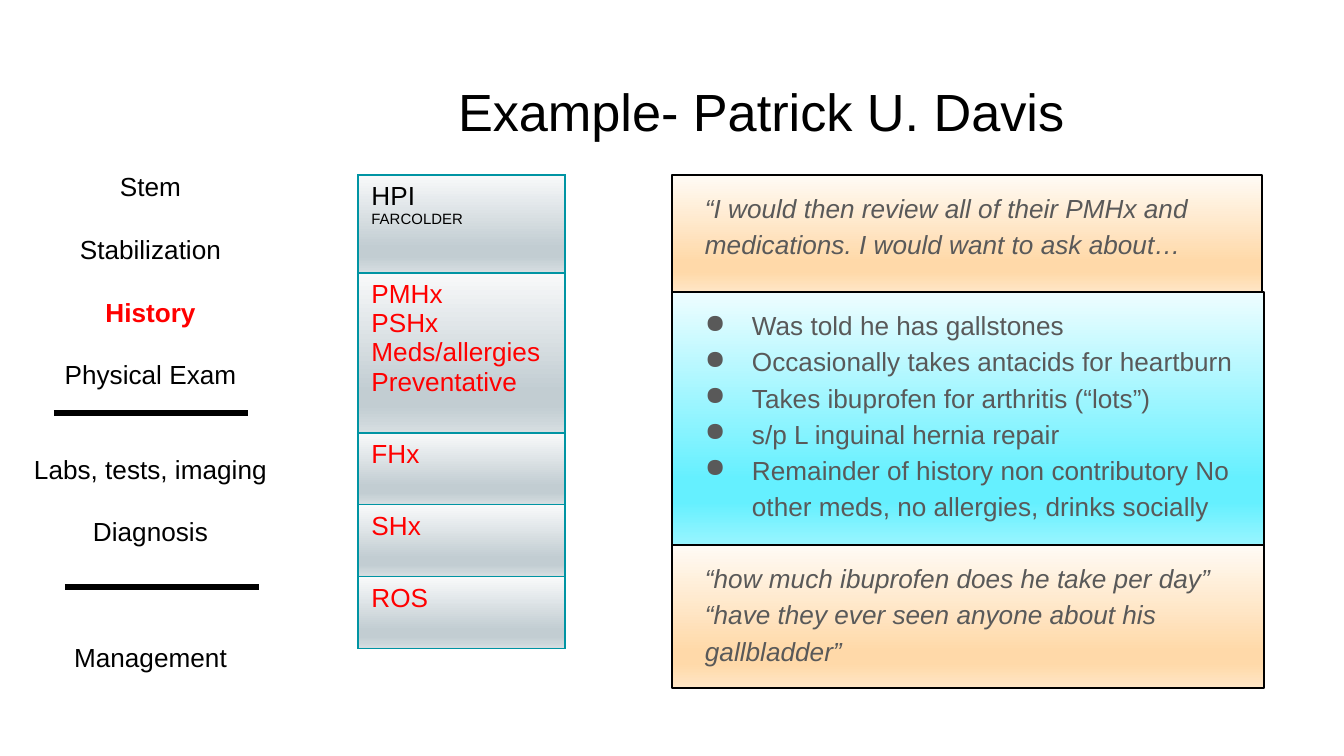
from dataclasses import dataclass

from lxml.etree import SubElement
from pptx import Presentation
from pptx.dml.color import RGBColor as Rgb
from pptx.enum.shapes import MSO_CONNECTOR as Connector, MSO_SHAPE as Shape
from pptx.enum.text import MSO_ANCHOR as Anchor, MSO_AUTO_SIZE as AutoSize, PP_ALIGN as Align
from pptx.oxml.ns import qn
from pptx.util import Emu, Pt

EMU_PER_PX = 914400 / 134.4


@dataclass(frozen=True)
class Theme:
    """Colours, gradients, type sizes and line pitches of the slide."""
    font: str = "Arial"
    ink: str = "000000"
    accent: str = "FF0000"
    muted: str = "595959"
    grid: str = "0094A3"
    grey: tuple = ("F8F9FA", "C2CDD2", "C2CDD2", "D6DEE1")
    orange: tuple = ("FFFBF5", "FFD9A9", "FFD9A9", "FFE6C6")
    cyan: tuple = ("EEFDFF", "65F0FF", "65F0FF", "98F5FF")
    stops: tuple = (0, 74, 83, 100)
    title: int = 28
    body: int = 14
    small: int = 8
    tight: float = 1.12
    normal: float = 1.2
    loose: float = 1.38
    thin: float = 0.75
    thick: float = 3.5


THEME = Theme()


def px(length):
    """Turn px into EMU."""
    return Emu(round(length * EMU_PER_PX))


def add_para(frame, index, text, color, pitch, size=THEME.body, align=Align.LEFT, bold=False, italic=False):
    """Write one single-run paragraph, reusing the first one of the frame."""
    para = frame.add_paragraph() if index else frame.paragraphs[0]
    para.alignment = align
    para.line_spacing = Pt(size * pitch)
    para.space_before = para.space_after = Pt(0)
    span = para.add_run()
    span.text = text
    font = span.font
    font.name, font.size, font.bold, font.italic = THEME.font, Pt(size), bold, italic
    font.color.rgb = Rgb.from_string(color)
    return para


def add_gradient(properties, colors):
    """Append a top-to-bottom gradient fill."""
    gradient = SubElement(properties, qn("a:gradFill"), rotWithShape="1")
    stops = SubElement(gradient, qn("a:gsLst"))
    for position, color in zip(THEME.stops, colors):
        stop = SubElement(stops, qn("a:gs"), pos=str(position * 1000))
        SubElement(stop, qn("a:srgbClr"), val=color)
    SubElement(gradient, qn("a:lin"), ang="5400000", scaled="0")


def indent_para(para, left, hanging=0, bullet=None):
    """Set the left indent and, if given, a hanging bullet."""
    properties = para._p.get_or_add_pPr()
    properties.set("marL", str(px(left)))
    properties.set("indent", str(px(-hanging)))
    if bullet:
        color = SubElement(properties, qn("a:buClr"))
        SubElement(color, qn("a:srgbClr"), val=THEME.muted)
        SubElement(properties, qn("a:buChar"), char=bullet)


def set_margins(frame, margin):
    """Give a text frame equal margins on all sides."""
    frame.margin_left = frame.margin_right = frame.margin_top = frame.margin_bottom = px(margin)


def add_title(page, text):
    """Place and fill the title placeholder."""
    title = page.shapes.title
    title.left, title.top, title.width, title.height = map(px, (445, 66, 853, 85))
    frame = title.text_frame
    frame.auto_size, frame.vertical_anchor = AutoSize.NONE, Anchor.TOP
    set_margins(frame, 13)
    add_para(frame, 0, text, THEME.ink, THEME.normal, THEME.title)


def add_steps(page, steps, current):
    """Add the centred list of exam steps, each with its gap in blank lines."""
    box = page.shapes.add_textbox(*map(px, (20, 164, 261, 520)))
    frame = box.text_frame
    frame.word_wrap = False
    for index, (text, gap) in enumerate(steps):
        active = text == current
        para = add_para(frame, index, text, THEME.accent if active else THEME.ink,
                        THEME.normal, align=Align.CENTER, bold=active)
        para.space_before = Pt(gap * THEME.body * THEME.normal)


def add_divider(page, left, top, width):
    """Add a thick horizontal line."""
    line = page.shapes.add_connector(Connector.STRAIGHT, px(left), px(top), px(left + width), px(top))
    line.line.width = Pt(THEME.thick)
    line.line.color.rgb = Rgb.from_string(THEME.ink)
    SubElement(line._element.spPr, qn("a:effectLst"))


def style_cell(cell):
    """Give a cell its borders and gradient."""
    properties = cell._tc.get_or_add_tcPr()
    for side in ("lnL", "lnR", "lnT", "lnB"):
        border = SubElement(properties, qn(f"a:{side}"), w=str(Pt(THEME.thin)))
        fill = SubElement(border, qn("a:solidFill"))
        SubElement(fill, qn("a:srgbClr"), val=THEME.grid)
    add_gradient(properties, THEME.grey)


def add_history_table(page, rows):
    """Add the one-column table of history parts."""
    height = sum(row_height for row_height, _ in rows)
    table = page.shapes.add_table(len(rows), 1, *map(px, (358, 175, 207, height))).table
    table.first_row = table.horz_banding = False
    for index, (row_height, lines) in enumerate(rows):
        table.rows[index].height = px(row_height)
        cell = table.cell(index, 0)
        for number, (text, color, size) in enumerate(lines):
            add_para(cell.text_frame, number, text, color, THEME.tight, size)
        style_cell(cell)


def add_panel(page, top, width, height, colors, lines, bullet=None):
    """Add a gradient panel with quotes or bulleted answers."""
    panel = page.shapes.add_shape(Shape.RECTANGLE, *map(px, (672, top, width, height)))
    add_gradient(panel._element.spPr, colors)
    panel.line.color.rgb = Rgb.from_string(THEME.ink)
    panel.line.width = Pt(THEME.thin)
    panel.shadow.inherit = False
    frame = panel.text_frame
    frame.word_wrap, frame.vertical_anchor = True, Anchor.TOP
    set_margins(frame, 13)
    for index, text in enumerate(lines):
        para = add_para(frame, index, text, THEME.muted, THEME.loose, italic=not bullet)
        if bullet:
            indent_para(para, 67, 47, bullet)
        else:
            indent_para(para, 20)


def main():
    """Build the slide and save it."""
    deck = Presentation()
    deck.slide_width, deck.slide_height = px(1344), px(756)
    page = deck.slides.add_slide(deck.slide_layouts[5])
    add_title(page, "Example- Patrick U. Davis")

    red = (THEME.accent, THEME.body)
    past = ("PMHx", "PSHx", "Meds/allergies", "Preventative")
    add_history_table(page, [
        (98, [("HPI", THEME.ink, THEME.body), ("FARCOLDER", THEME.ink, THEME.small)]),
        (160, [(text, *red) for text in past]),
        *((72, [(text, *red)]) for text in ("FHx", "SHx", "ROS")),
    ])

    add_steps(page, [
        ("Stem", 0), ("Stabilization", 1), ("History", 1), ("Physical Exam", 1),
        ("Labs, tests, imaging", 2), ("Diagnosis", 1), ("Management", 3),
    ], "History")
    add_divider(page, 54, 413, 194)
    add_divider(page, 65, 587, 194)

    add_panel(page, 175, 590, 117, THEME.orange, [
        "“I would then review all of their PMHx and medications. I would want to ask about…",
    ])
    add_panel(page, 292, 592, 253, THEME.cyan, [
        "Was told he has gallstones",
        "Occasionally takes antacids for heartburn",
        "Takes ibuprofen for arthritis (“lots”)",
        "s/p L inguinal hernia repair",
        "Remainder of history non contributory No other meds, no allergies, drinks socially",
    ], bullet="●")
    add_panel(page, 545, 592, 143, THEME.orange, [
        "“how much ibuprofen does he take per day”",
        "“have they ever seen anyone about his gallbladder”",
    ])
    deck.save("out.pptx")


if __name__ == "__main__":
    main()
